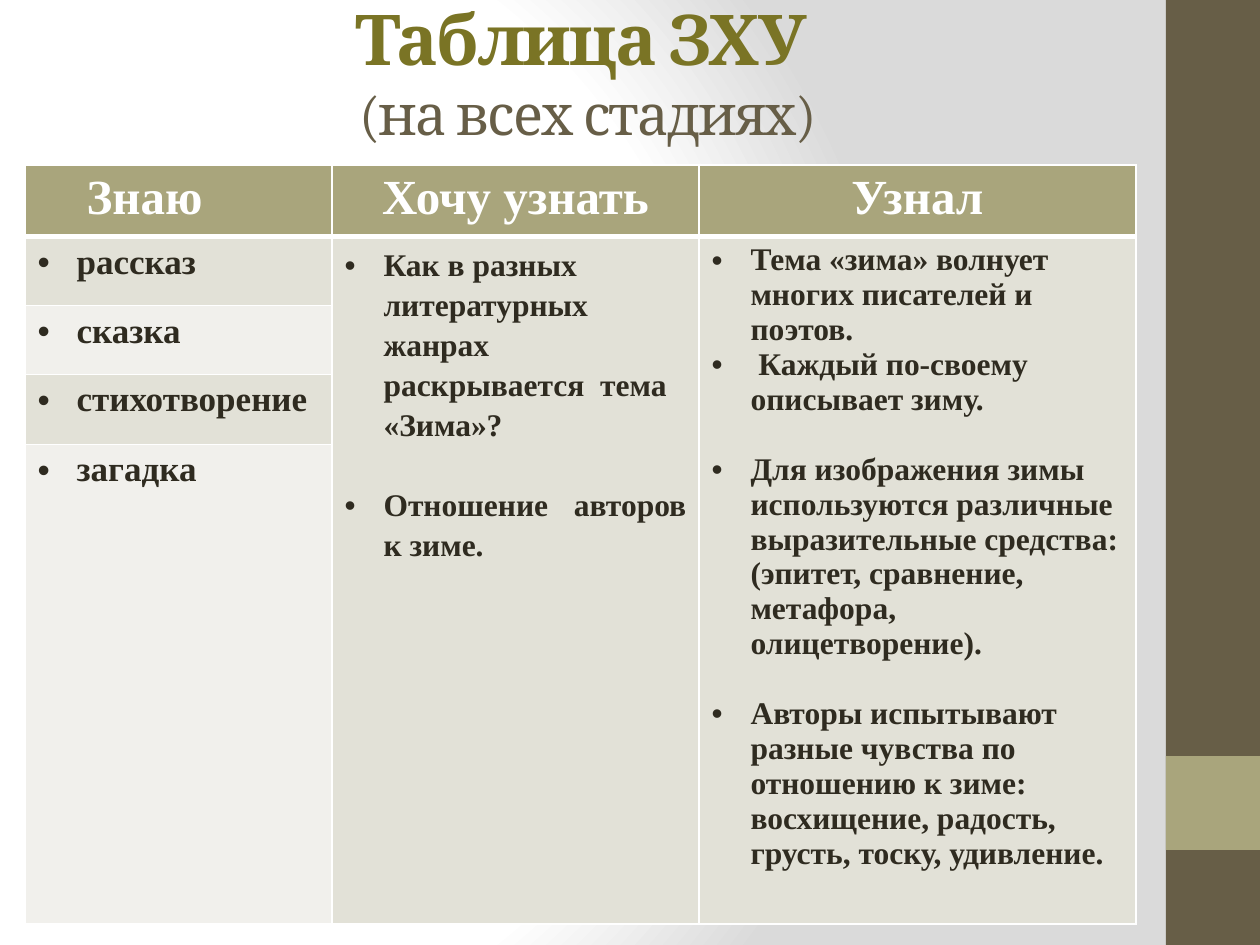
from lxml import etree
from pptx import Presentation
from pptx import util as u
from pptx.dml.color import RGBColor
from pptx.enum import shapes, text
from pptx.oxml import parse_xml
from pptx.oxml.ns import nsdecls, qn

PX = 914400 // 126
BROWN = RGBColor(0x67, 0x5E, 0x47)
OLIVE = RGBColor(0xA9, 0xA5, 0x7C)
TITLE = RGBColor(0x7A, 0x74, 0x25)
INK = RGBColor(0x2F, 0x2B, 0x20)
WHITE = RGBColor(0xFF, 0xFF, 0xFF)
DARK_BAND = RGBColor(0xE2, 0xE1, 0xD7)
LIGHT_BAND = RGBColor(0xF1, 0xF0, 0xEC)
GREY = RGBColor(0xDA, 0xDA, 0xDA)

INDENT = 39
COLUMNS = [307, 367, 437]
ROWS = [70, 69, 69, 70, 431]
HEADERS = ["Знаю", "Хочу узнать", "Узнал"]
KNOWN = ["рассказ", "сказка", "стихотворение", "загадка"]
QUESTIONS = [
    "Как в разных литературных жанрах раскрывается  тема «Зима»?",
    "Отношение авторов к зиме.",
]
LEARNED = [
    "Тема «зима» волнует многих писателей и поэтов.",
    " Каждый по-своему описывает зиму.",
    "Для изображения зимы используются различные выразительные средства: "
    "(эпитет, сравнение, метафора, олицетворение).",
    "Авторы испытывают разные чувства по отношению к зиме: "
    "восхищение, радость, грусть, тоску, удивление.",
]


def px(n):
    return u.Emu(n * PX)


def style_run(r, size, color, font="Times New Roman", bold=True):
    r.font.size = u.Pt(size)
    r.font.name = font
    r.font.bold = bold
    r.font.color.rgb = color


def set_background(s):
    s.background.fill.gradient()
    old = next(s.element.iter(qn("a:gradFill")))
    stops = "".join(
        f'<a:gs pos="{pos}"><a:srgbClr val="{color}"/></a:gs>'
        for pos, color in [(0, WHITE), (75000, WHITE), (100000, GREY)]
    )
    old.getparent().replace(old, parse_xml(
        f'<a:gradFill {nsdecls("a")} rotWithShape="1"><a:gsLst>{stops}</a:gsLst>'
        '<a:path path="circle"><a:fillToRect l="20000" t="50000" r="100000" b="50000"/>'
        '</a:path></a:gradFill>'))


def add_block(s, x, y, w, h, color):
    sp = s.shapes.add_shape(shapes.MSO_SHAPE.RECTANGLE, px(x), px(y), px(w), px(h))
    sp.shadow.inherit = False
    sp.fill.solid()
    sp.fill.fore_color.rgb = color
    sp.line.fill.background()


def add_title(s):
    tf = s.shapes.add_textbox(px(63), px(16), px(1050), px(110)).text_frame
    tf.word_wrap = True
    tf.vertical_anchor = text.MSO_ANCHOR.MIDDLE
    p = tf.paragraphs[0]
    p.text = "Таблица ЗХУ \v(на всех стадиях)"
    p.alignment = text.PP_ALIGN.CENTER
    for r, size, color, bold in zip(p.runs, (40, 32), (TITLE, BROWN), (True, False)):
        style_run(r, size, color, "Cambria", bold)
        r.font._element.set("spc", "-100")


def set_borders(cell, bottom):
    pr = cell._tc.get_or_add_tcPr()
    for i, (side, width) in enumerate([("L", 1), ("R", 1), ("T", 1), ("B", bottom)]):
        pr.insert(i, parse_xml(
            f'<a:ln{side} {nsdecls("a")} w="{u.Pt(width)}"><a:solidFill>'
            f'<a:srgbClr val="{WHITE}"/></a:solidFill></a:ln{side}>'))


def set_bullet(p):
    pr = p._p.get_or_add_pPr()
    pr.set("marL", str(px(INDENT)))
    pr.set("indent", str(px(-INDENT)))
    etree.SubElement(pr, qn("a:buFont")).set("typeface", "Arial")
    etree.SubElement(pr, qn("a:buChar")).set("char", "•")


def fill_list(cell, items, size, line_spacing=1.0, gap=0, spaced=()):
    tf = cell.text_frame
    tf.text = "\n".join(items)
    for i, p in enumerate(tf.paragraphs):
        p.line_spacing = line_spacing
        if i in spaced:
            p.space_before = u.Pt(gap)
        set_bullet(p)
        style_run(p.runs[0], size, INK)


def fill_header(cell, label):
    cell.text_frame.text = label
    p = cell.text_frame.paragraphs[0]
    p.alignment = text.PP_ALIGN.CENTER
    style_run(p.runs[0], 28, WHITE)


def add_kwl_table(s):
    table = s.shapes.add_table(len(ROWS), len(COLUMNS), px(25), px(165),
                               px(sum(COLUMNS)), px(sum(ROWS))).table
    for column, width in zip(table.columns, COLUMNS):
        column.width = px(width)
    for row, height in zip(table.rows, ROWS):
        row.height = px(height)
    for i in range(len(ROWS)):
        for j in range(len(COLUMNS)):
            cell = table.cell(i, j)
            cell.fill.solid()
            band = LIGHT_BAND if j == 0 and i % 2 == 0 else DARK_BAND
            cell.fill.fore_color.rgb = OLIVE if i == 0 else band
            set_borders(cell, 3 if i == 0 else 1)
    for j, label in enumerate(HEADERS):
        fill_header(table.cell(0, j), label)
    first = table.cell(0, 0).text_frame.paragraphs[0]
    first.alignment = text.PP_ALIGN.LEFT
    first._p.get_or_add_pPr().set("marL", str(px(49)))
    for i, genre in enumerate(KNOWN, 1):
        fill_list(table.cell(i, 0), [genre], 20)
    for j in (1, 2):
        table.cell(1, j).merge(table.cell(len(ROWS) - 1, j))
    questions = table.cell(1, 1)
    fill_list(questions, QUESTIONS, 18, 1.15, 23, (1,))
    questions.text_frame.paragraphs[1].alignment = text.PP_ALIGN.JUSTIFY
    fill_list(table.cell(1, 2), LEARNED, 18, 1.0, 20, (2, 3))


def main():
    prs = Presentation()
    prs.slide_width, prs.slide_height = px(1260), px(945)
    s = prs.slides.add_slide(prs.slide_layouts[6])
    set_background(s)
    add_block(s, 1166, 0, 94, 945, BROWN)
    add_block(s, 1166, 756, 94, 94, OLIVE)
    add_title(s)
    add_kwl_table(s)
    prs.save("out.pptx")


if __name__ == "__main__":
    main()
